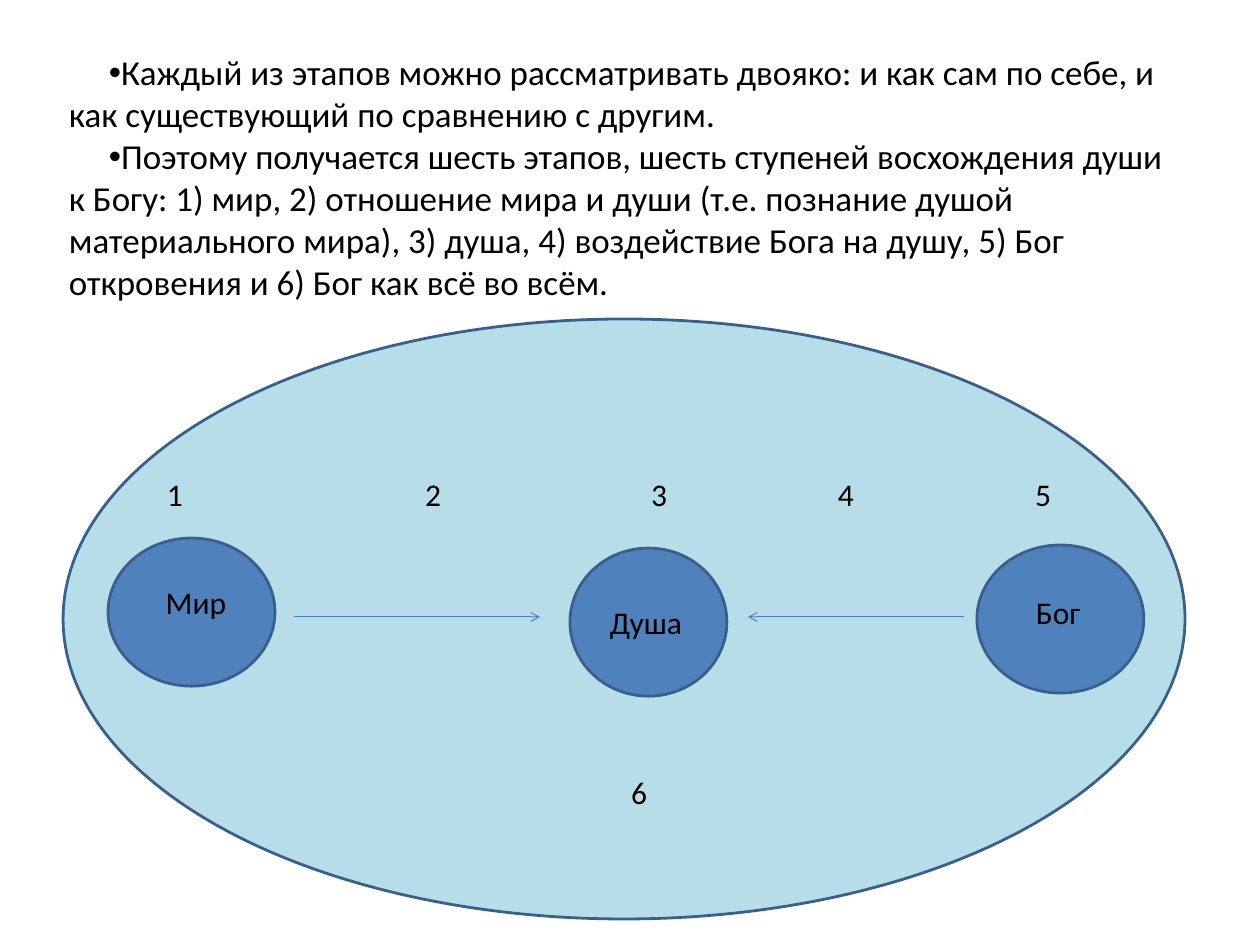
from lxml.etree import SubElement
from pptx import Presentation
from pptx.dml.color import RGBColor
from pptx.enum.shapes import MSO_CONNECTOR as Connector, MSO_SHAPE as Shape
from pptx.enum.text import MSO_AUTO_SIZE as AutoSize, PP_ALIGN as Align
from pptx.oxml.ns import qn
from pptx.util import Pt

BLACK = RGBColor(0x00, 0x00, 0x00)
PALE_BLUE = RGBColor(0xB7, 0xDE, 0xE8)
BLUE = RGBColor(0x4F, 0x81, 0xBD)
OUTLINE = RGBColor(0x3A, 0x5F, 0x8C)
ARROW = RGBColor(0x4B, 0x7E, 0xBC)

FONT = "Calibri"
LABEL_SIZE = 22.7
BODY_SIZE = 25.2
LABEL_HEIGHT = 34.6
CIRCLE_HEIGHT = 106.6
NUMBER_TOP = 338.4
ARROW_Y = 444.2

STATEMENTS = [
    "Каждый из этапов можно рассматривать двояко: и как сам по себе, "
    "и как существующий по сравнению с другим.",
    "Поэтому получается шесть этапов, шесть ступеней восхождения души к Богу: "
    "1) мир, 2) отношение мира и души (т.е. познание душой материального мира), "
    "3) душа, 4) воздействие Бога на душу, 5) Бог откровения "
    "и 6) Бог как всё во всём.",
]

# Left, top and width of each circle, then its label with the same three values
CIRCLES = [
    ((77.8, 387.4, 120.2), "Мир", (91.4, 416.2, 99.4), Align.CENTER),
    ((410.4, 394.6, 113), "Душа", (432, 430.6, 70.6), Align.LEFT),
    ((703.4, 392.4, 120.2), "Бог", (722.9, 423.4, 77.8), Align.CENTER),
]

# Left, top, width and alignment of the stage numbers, in order
STAGES = [
    (113, NUMBER_TOP, 70.6, Align.LEFT),
    (262.1, NUMBER_TOP, 99.4, Align.CENTER),
    (424.8, NUMBER_TOP, 99.4, Align.CENTER),
    (566.6, NUMBER_TOP, 85, Align.CENTER),
    (701.3, NUMBER_TOP, 99.4, Align.CENTER),
    (410.4, 553, 99.4, Align.CENTER),
]

ARROWS = [(211.7, 388.8), (694.1, 538.6)]


def add_ellipse(page, left, top, width, height, color):
    ellipse = page.shapes.add_shape(
        Shape.OVAL, Pt(left), Pt(top), Pt(width), Pt(height))
    ellipse.shadow.inherit = False
    ellipse.fill.solid()
    ellipse.fill.fore_color.rgb = color
    ellipse.line.color.rgb = OUTLINE
    ellipse.line.width = Pt(2)


def add_text(page, left, top, width, height, text, size, align=Align.LEFT):
    box = page.shapes.add_textbox(Pt(left), Pt(top), Pt(width), Pt(height))
    frame = box.text_frame
    frame.word_wrap = True
    frame.auto_size = AutoSize.SHAPE_TO_FIT_TEXT
    frame.text = text
    for para in frame.paragraphs:
        para.alignment = align
        for span in para.runs:
            span.font.name = FONT
            span.font.size = Pt(size)
            span.font.color.rgb = BLACK
    return frame


def add_bullets(frame, margin, indent):
    for para in frame.paragraphs:
        properties = para._p.get_or_add_pPr()
        properties.set("marL", str(Pt(margin)))
        properties.set("indent", str(Pt(indent)))
        SubElement(properties, qn("a:buFont"), typeface="Arial")
        SubElement(properties, qn("a:buChar"), char="•")


def add_arrow(page, start, end):
    arrow = page.shapes.add_connector(
        Connector.STRAIGHT, Pt(start), Pt(ARROW_Y), Pt(end), Pt(ARROW_Y))
    arrow.line.color.rgb = ARROW
    arrow.line.width = Pt(0.75)
    SubElement(arrow.line._get_or_add_ln(), qn("a:tailEnd"), type="arrow")
    SubElement(arrow._element.spPr, qn("a:effectLst"))


def main():
    deck = Presentation()
    deck.slide_width = Pt(907.2)
    deck.slide_height = Pt(680.4)
    page = deck.slides.add_slide(deck.slide_layouts[6])

    add_ellipse(page, 45.4, 229.7, 807.8, 432, PALE_BLUE)
    for circle, name, place, align in CIRCLES:
        add_ellipse(page, *circle, CIRCLE_HEIGHT, BLUE)
        add_text(page, *place, LABEL_HEIGHT, name, LABEL_SIZE, align)
    for start, end in ARROWS:
        add_arrow(page, start, end)
    for number, (left, top, width, align) in enumerate(STAGES, start=1):
        add_text(page, left, top, width, LABEL_HEIGHT, str(number), LABEL_SIZE, align)

    statements = add_text(
        page, 38.9, 33.1, 821.5, 190.8, "\n".join(STATEMENTS), BODY_SIZE)
    add_bullets(statements, 3.6, 28.8)

    deck.save("out.pptx")


if __name__ == "__main__":
    main()
